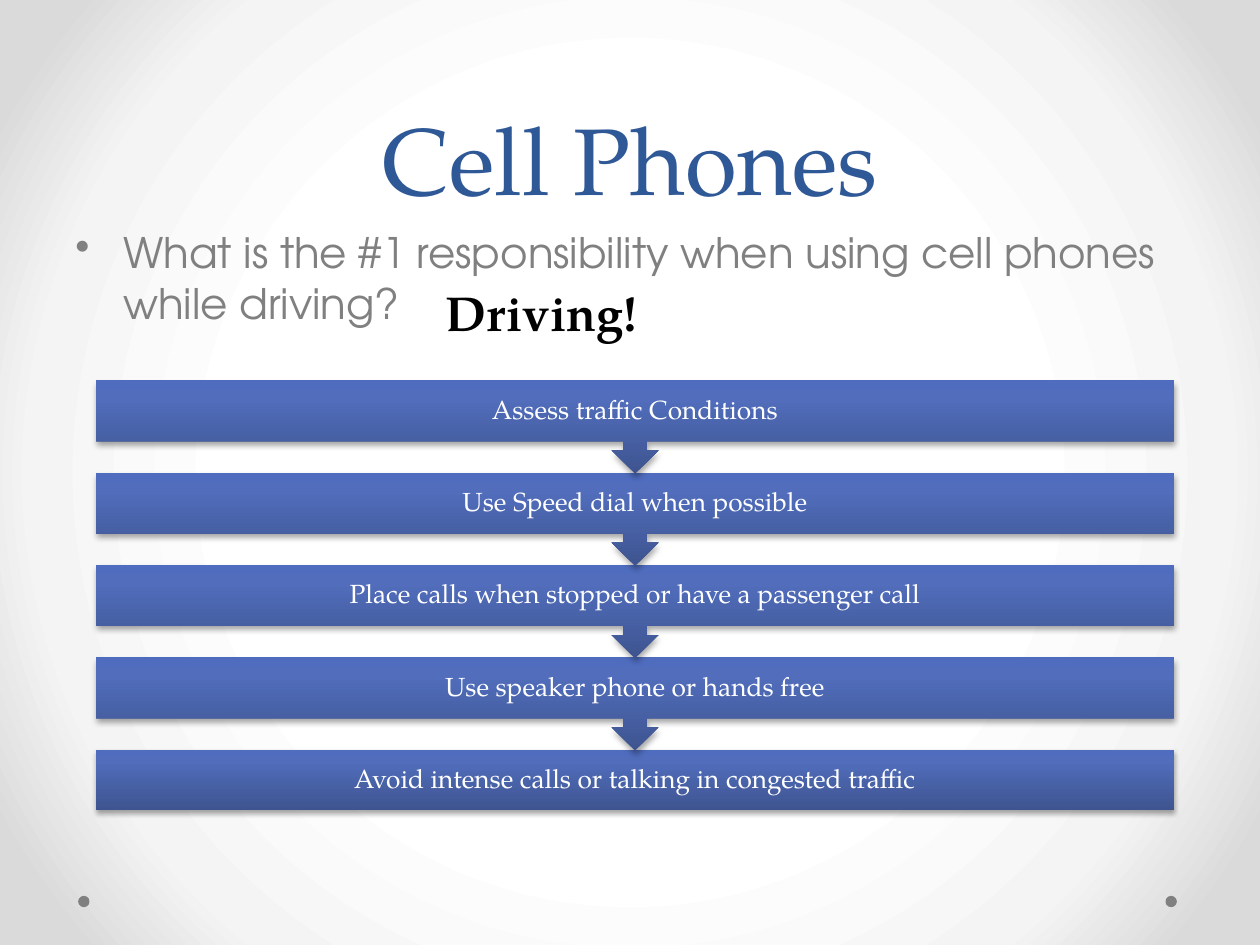
from lxml import etree
from pptx import Presentation
from pptx.dml.color import RGBColor
from pptx.enum.shapes import MSO_SHAPE
from pptx.enum.text import MSO_ANCHOR, PP_ALIGN
from pptx.oxml import parse_xml
from pptx.oxml.ns import nsdecls, qn
from pptx.util import Inches, Pt

ELLIPSE, RECTANGLE = MSO_SHAPE.OVAL, MSO_SHAPE.RECTANGLE
CALLOUT = MSO_SHAPE.UP_ARROW_CALLOUT
TOP, MIDDLE, BOTTOM = MSO_ANCHOR.TOP, MSO_ANCHOR.MIDDLE, MSO_ANCHOR.BOTTOM
LEFT, CENTER = PP_ALIGN.LEFT, PP_ALIGN.CENTER

SERIF, SANS = "TeX Gyre Pagella", "TeX Gyre Adventor"
COLORS = {"title": "2F5897", "gray": "808080", "black": "000000", "white": "FFFFFF"}
BACKGROUND_STOPS = [(50, "FFFFFF"), (76, "F4F4F4"), (92, "DADADA")]
STEP_STOPS = [(0, "3E5490"), (80, "516DBB"), (100, "4F6CBE")]
RADIAL = ('<a:path path="circle"><a:fillToRect l="50000" t="50000" '
          'r="50000" b="50000"/></a:path>')
UPWARD = '<a:lin ang="16200000" scaled="0"/>'

STEPS = [
    "Assess traffic Conditions",
    "Use Speed dial when possible",
    "Place calls when stopped or have a passenger call",
    "Use speaker phone or hands free",
    "Avoid intense calls or talking in congested traffic",
]
STEP_LEFT, STEP_TOP, STEP_WIDTH = 0.76, 3.02, 8.56
STEP_PITCH, BOX_HEIGHT, CALLOUT_HEIGHT = 0.7325, 0.48, 0.74


def set_gradient(fill, parent, stops, direction):
    """Give the fill under parent its own stops and direction."""
    fill.gradient()
    old = parent.find(".//" + qn("a:gradFill"))
    stop_xml = "".join(
        f'<a:gs pos="{position * 1000}"><a:srgbClr val="{color}"/></a:gs>'
        for position, color in stops)
    old.getparent().replace(old, parse_xml(
        f'<a:gradFill {nsdecls("a")} rotWithShape="0">'
        f'<a:gsLst>{stop_xml}</a:gsLst>{direction}</a:gradFill>'))


def add_shadow(shape):
    effects = shape._element.spPr.find(qn("a:effectLst"))
    effects.append(parse_xml(
        f'<a:outerShdw {nsdecls("a")} blurRad="{Pt(3.1)}" dist="{Pt(1.8)}" '
        'dir="5400000" rotWithShape="0"><a:srgbClr val="000000">'
        '<a:alpha val="35000"/></a:srgbClr></a:outerShdw>'))


def add_plain_shape(slide, kind, left, top, width, height):
    shape = slide.shapes.add_shape(
        kind, Inches(left), Inches(top), Inches(width), Inches(height))
    shape.shadow.inherit = False
    shape.line.fill.background()
    return shape


def add_text(slide, box, text, font, color, anchor=TOP, align=LEFT,
             spacing=1.0, margin=None, bullet=False):
    shape = slide.shapes.add_textbox(*(Inches(length) for length in box))
    frame = shape.text_frame
    frame.word_wrap = True
    frame.vertical_anchor = anchor
    if margin is not None:
        for side in ("left", "top", "right", "bottom"):
            setattr(frame, f"margin_{side}", Inches(margin))
    paragraph = frame.paragraphs[0]
    paragraph.alignment = align
    paragraph.line_spacing = spacing
    if bullet:
        properties = paragraph._p.get_or_add_pPr()
        properties.set("marL", str(Inches(0.38)))
        properties.set("indent", str(Inches(-0.38)))
        etree.SubElement(properties, qn("a:buChar")).set("char", "•")
    run = paragraph.add_run()
    run.text = text
    for name, value in font.items():
        setattr(run.font, name, value)
    run.font.color.rgb = RGBColor.from_string(COLORS[color])


def add_dot(slide, left):
    dot = add_plain_shape(slide, ELLIPSE, left, 7.11, 0.09, 0.09)
    dot.fill.solid()
    dot.fill.fore_color.rgb = RGBColor.from_string(COLORS["gray"])


def add_step(slide, index, text):
    """Draw one step; every step but the last points to the next."""
    top = STEP_TOP + index * STEP_PITCH
    is_last = index == len(STEPS) - 1
    shape = add_plain_shape(
        slide, RECTANGLE if is_last else CALLOUT, STEP_LEFT, top,
        STEP_WIDTH, BOX_HEIGHT if is_last else CALLOUT_HEIGHT)
    if not is_last:
        shape.rotation = 180
    set_gradient(shape.fill, shape._element, STEP_STOPS, UPWARD)
    add_shadow(shape)
    add_text(slide, (STEP_LEFT, top, STEP_WIDTH, BOX_HEIGHT), text,
             {"name": SERIF, "size": Pt(15)}, "white", MIDDLE, CENTER,
             spacing=0.9, margin=0.12)


def main():
    presentation = Presentation()
    presentation.slide_width, presentation.slide_height = Inches(10), Inches(7.5)
    slide = presentation.slides.add_slide(presentation.slide_layouts[6])

    # Background and corner dots
    set_gradient(slide.background.fill, slide.element, BACKGROUND_STOPS, RADIAL)
    for left in (9.25, 0.62):
        add_dot(slide, left)

    # Title, question and answer
    add_text(slide, (0.5, 0, 9, 1.75), "Cell Phones",
             {"name": SERIF, "size": Pt(54)}, "title", BOTTOM, CENTER,
             spacing=Pt(58))
    add_text(slide, (0.5, 1.75, 9, 0.94),
             "What is the #1 responsibility when using cell phones while driving?",
             {"name": SANS, "size": Pt(24)}, "gray", bullet=True)
    add_text(slide, (3.44, 2.19, 1.8, 0.57), "Driving!",
             {"name": SERIF, "size": Pt(28), "bold": True}, "black")

    # Steps from the bottom up, so each arrow lies over the next box
    for index, text in reversed(list(enumerate(STEPS))):
        add_step(slide, index, text)

    presentation.save("out.pptx")


if __name__ == "__main__":
    main()
